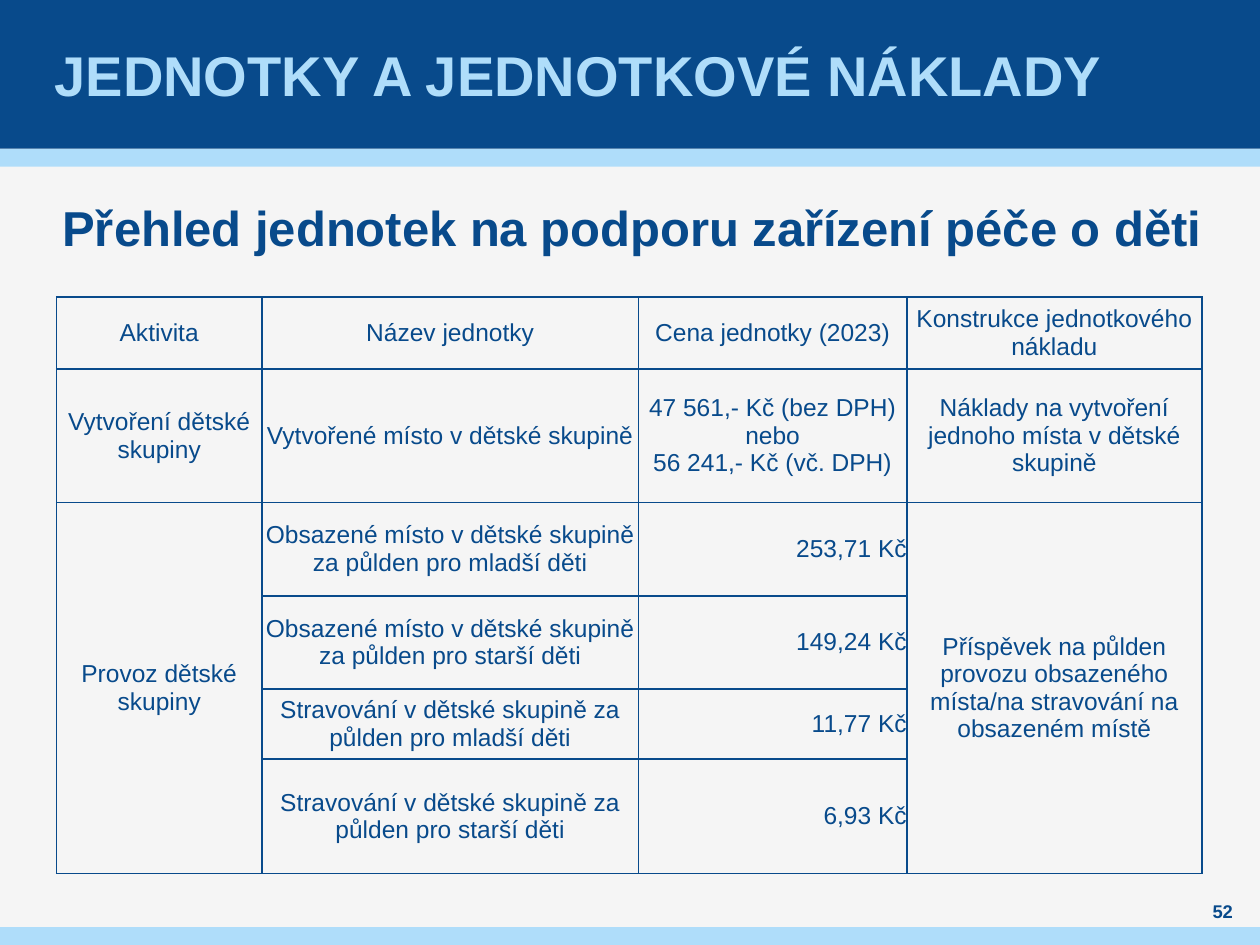
from lxml.etree import SubElement
from pptx import Presentation
from pptx.dml.color import RGBColor
from pptx.enum.shapes import MSO_SHAPE
from pptx.enum.text import MSO_ANCHOR, PP_ALIGN
from pptx.oxml.ns import qn
from pptx.util import Cm, Pt

NAVY, SKY, PALE = "084A8B", "AFDDFA", "F5F5F5"
WIDE, HIGH = 25.4, 19.05
COLS = [4.14, 7.59, 5.41, 5.95]
ROWS = [1.45, 2.69, 1.88, 1.88, 1.41, 2.31]
CELLS = [
    ["Aktivita", "Název jednotky", "Cena jednotky (2023)",
     "Konstrukce jednotkového nákladu"],
    ["Vytvoření dětské skupiny", "Vytvořené místo v dětské skupině",
     "47 561,- Kč (bez DPH)\nnebo\v56 241,- Kč (vč. DPH)",
     "Náklady na vytvoření jednoho místa v dětské skupině"],
    ["Provoz dětské skupiny",
     "Obsazené místo v dětské skupině za půlden pro mladší děti", "253,71 Kč",
     "Příspěvek na půlden provozu obsazeného místa/na stravování na obsazeném místě"],
    ["", "Obsazené místo v dětské skupině za půlden pro starší děti", "149,24 Kč", ""],
    ["", "Stravování v dětské skupině za půlden pro mladší děti", "11,77 Kč", ""],
    ["", "Stravování v dětské skupině za půlden pro starší děti", "6,93 Kč", ""],
]


def paint(target, color):
    """Give a font or fill a solid colour from a hex string."""
    fill = getattr(target, "fill", target)
    fill.solid()
    fill.fore_color.rgb = RGBColor.from_string(color)


def style(frame, size, color, bold, align):
    """Format every paragraph and run of a text frame."""
    for para in frame.paragraphs:
        para.alignment = align
        for run in para.runs:
            run.font.name = "Arial"
            run.font.size = Pt(size)
            run.font.bold = bold
            paint(run.font, color)


def add_band(slide, box, color):
    """Add a plain filled rectangle."""
    band = slide.shapes.add_shape(MSO_SHAPE.RECTANGLE, *map(Cm, box))
    band.shadow.inherit = False
    paint(band, color)
    band.line.fill.background()


def add_label(slide, box, text, size, color, align, pad):
    """Add a bold text box with the given side and top padding."""
    frame = slide.shapes.add_textbox(*map(Cm, box)).text_frame
    frame.word_wrap = True
    frame.vertical_anchor = MSO_ANCHOR.MIDDLE
    frame.margin_left = frame.margin_right = Cm(pad[0])
    frame.margin_top = frame.margin_bottom = Cm(pad[1])
    frame.text = text
    style(frame, size, color, True, align)


def add_header(slide, box, title):
    """Add the title band with a light stripe under it."""
    left, top, width, height = box
    add_band(slide, (left, top + height, width, 0.36), SKY)
    add_band(slide, box, NAVY)
    add_label(slide, (left + 1, top, width - 2, height), title, 32, SKY,
              PP_ALIGN.LEFT, (0.1, 0))


def add_footer(slide, box, number):
    """Add the bottom stripe with the page number above it."""
    left, top, width, height = box
    add_band(slide, box, SKY)
    add_label(slide, (left + width - 1.4, top - 0.58, 1.3, 0.5), number, 10.5,
              NAVY, PP_ALIGN.CENTER, (0, 0))


def add_edges(cell, color):
    """Draw a one point line on all four sides of a cell."""
    props = cell._tc.get_or_add_tcPr()
    for side in ("lnL", "lnR", "lnT", "lnB"):
        line = SubElement(props, qn(f"a:{side}"), w=str(Pt(1)))
        fill = SubElement(line, qn("a:solidFill"))
        SubElement(fill, qn("a:srgbClr"), val=color)


def fill_cell(cell, text, align):
    """Set the text, edges and format of one cell."""
    cell.text_frame.text = text
    cell.vertical_anchor = MSO_ANCHOR.MIDDLE
    cell.margin_left = cell.margin_right = 0
    cell.margin_top = cell.margin_bottom = 0
    add_edges(cell, NAVY)
    cell.fill.background()
    style(cell.text_frame, 14, NAVY, False, align)


def add_costs(slide, left, top):
    """Add the table of units and their costs."""
    size = (sum(COLS), sum(ROWS))
    table = slide.shapes.add_table(len(ROWS), len(COLS),
                                   *map(Cm, (left, top, *size))).table
    table.first_row = table.horz_banding = False
    for col, width in zip(table.columns, COLS):
        col.width = Cm(width)
    for row, height in zip(table.rows, ROWS):
        row.height = Cm(height)
    for r, texts in enumerate(CELLS):
        for c, text in enumerate(texts):
            price = c == 2 and r > 1
            fill_cell(table.cell(r, c), text,
                      PP_ALIGN.RIGHT if price else PP_ALIGN.CENTER)
    for c in (0, 3):
        table.cell(2, c).merge(table.cell(5, c))


def main():
    """Build and save the slide."""
    deck = Presentation()
    deck.slide_width, deck.slide_height = Cm(WIDE), Cm(HIGH)
    slide = deck.slides.add_slide(deck.slide_layouts[6])
    paint(slide.background, PALE)
    add_header(slide, (0, 0, WIDE, 3), "JEDNOTKY A JEDNOTKOVÉ NÁKLADY")
    add_footer(slide, (0, HIGH - 0.36, WIDE, 0.36), "52")
    add_label(slide, (0.94, 3.86, 23.6, 1.45),
              "Přehled jednotek na podporu zařízení péče o děti", 28, NAVY,
              PP_ALIGN.CENTER, (0.25, 0.13))
    add_costs(slide, 1.14, 5.99)
    deck.save("out.pptx")


if __name__ == "__main__":
    main()
